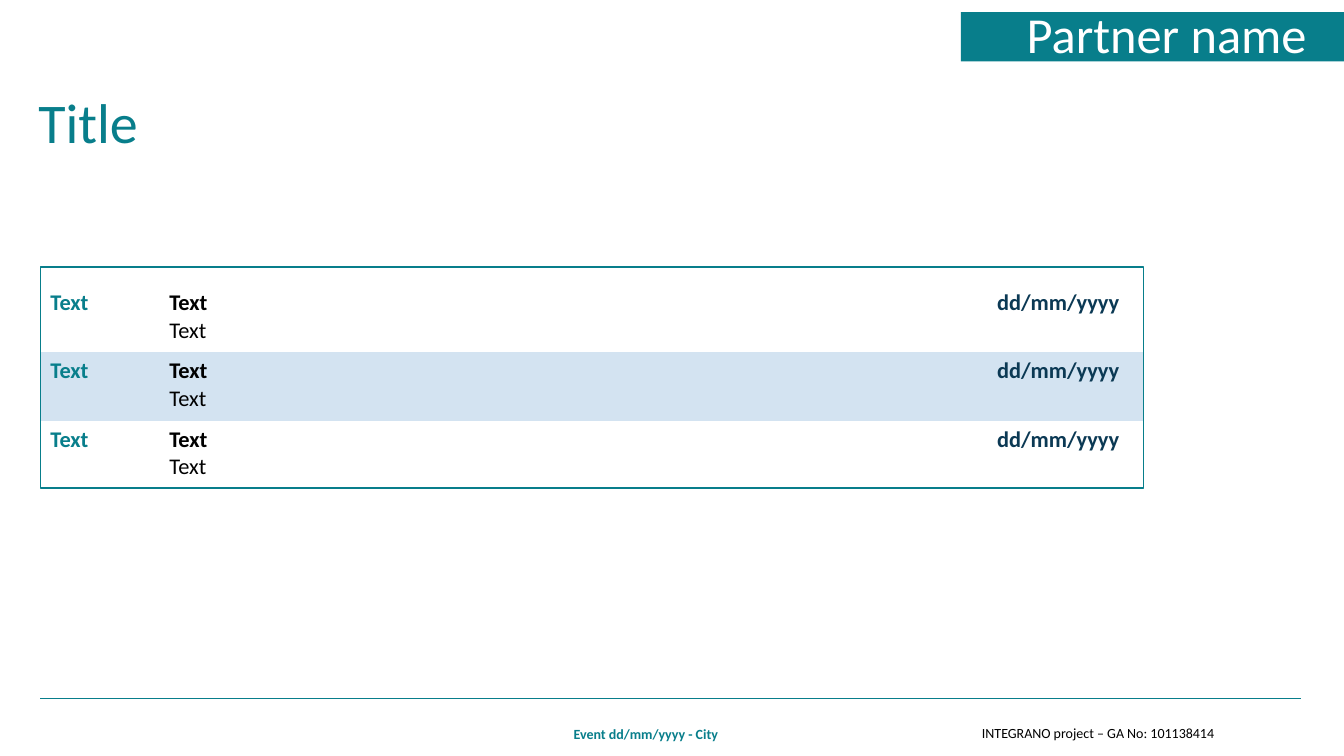
"""Builds a partner slide with a title, a dated text table and a footer."""
import dataclasses
import pptx
import pptx.dml.color
import pptx.enum.shapes
import pptx.enum.text
import pptx.oxml.ns
import pptx.util
from lxml import etree

Inches = pptx.util.Inches
Align = pptx.enum.text.PP_ALIGN
Anchor = pptx.enum.text.MSO_ANCHOR


@dataclasses.dataclass
class Theme:
    face: str = "Calibri"
    teal: str = "087E8B"
    navy: str = "0B3954"
    black: str = "000000"
    white: str = "FFFFFF"
    band: str = "D3E3F1"
    plain: str = "{2D5ABB26-0587-4C30-8999-92F81FD0307C}"
    title: int = 40
    name: int = 36
    body: int = 16
    foot: int = 10
    line: int = 1


class Deck:
    def __init__(self, theme):
        self.theme = theme
        self.show = pptx.Presentation()
        self.show.slide_width = Inches(13.33)
        self.show.slide_height = Inches(7.5)
        self.slide = self.show.slides.add_slide(self.show.slide_layouts[5])

    def color(self, code):
        return pptx.dml.color.RGBColor.from_string(code)

    def font(self, run, size, code, bold=False):
        run.font.name = self.theme.face
        run.font.size = pptx.util.Pt(size)
        run.font.color.rgb = self.color(code)
        run.font.bold = bold

    def stroke(self, shape):
        shape.line.color.rgb = self.color(self.theme.teal)
        shape.line.width = pptx.util.Pt(self.theme.line)

    def put_text(self, shape, text, size, code, align, anchor, bold=False):
        frame = shape.text_frame
        frame.text = text
        frame.word_wrap = True
        frame.auto_size = pptx.enum.text.MSO_AUTO_SIZE.NONE
        frame.vertical_anchor = anchor
        frame.paragraphs[0].alignment = align
        self.font(frame.paragraphs[0].runs[0], size, code, bold)

    def title(self, text, left, top, width, height):
        head = self.slide.shapes.title
        head.left, head.top = Inches(left), Inches(top)
        head.width, head.height = Inches(width), Inches(height)
        self.put_text(head, text, self.theme.title, self.theme.teal, Align.LEFT, Anchor.MIDDLE)

    def label(self, text, area, size, code, align, bold=False):
        box = self.slide.shapes.add_textbox(*map(Inches, area))
        self.put_text(box, text, size, code, align, Anchor.TOP, bold)

    def rect(self, area, fill=None):
        kind = pptx.enum.shapes.MSO_SHAPE.RECTANGLE
        shape = self.slide.shapes.add_shape(kind, *map(Inches, area))
        shape.shadow.inherit = False
        if fill:
            shape.fill.solid()
            shape.fill.fore_color.rgb = self.color(fill)
            shape.line.fill.background()
        else:
            shape.fill.background()
            self.stroke(shape)

    def rule(self, left, right, top):
        kind = pptx.enum.shapes.MSO_CONNECTOR.STRAIGHT
        line = self.slide.shapes.add_connector(
            kind, Inches(left), Inches(top), Inches(right), Inches(top))
        self.stroke(line)
        etree.SubElement(line._element.spPr, pptx.oxml.ns.qn("a:effectLst"))

    def table(self, rows, area, widths):
        theme = self.theme
        table = self.slide.shapes.add_table(
            len(rows), len(widths), *map(Inches, area)).table
        table.first_row = table.horz_banding = False
        style = table._tbl.tblPr.find(pptx.oxml.ns.qn("a:tableStyleId"))
        style.text = theme.plain
        for col, width in zip(table.columns, widths):
            col.width = Inches(width)
        for i, row in enumerate(rows):
            for j, text in enumerate(row):
                cell = table.cell(i, j)
                if i % 2:
                    cell.fill.solid()
                    cell.fill.fore_color.rgb = self.color(theme.band)
                else:
                    cell.fill.background()
                para = cell.text_frame.paragraphs[0]
                para.text = text
                code = (theme.teal, theme.black, theme.navy)[j]
                for k, run in enumerate(para.runs):
                    self.font(run, theme.body, code, k == 0)

    def save(self):
        self.show.save("out.pptx")


def main():
    theme = Theme()
    deck = Deck(theme)
    deck.label("INTEGRANO project – GA No: 101138414", (9.27, 7.14, 2.87, 0.27),
               theme.foot, theme.black, Align.RIGHT)
    deck.rule(0.4, 12.9, 6.93)
    deck.rect((9.53, 0.12, 3.8, 0.49), theme.teal)
    deck.label("Event dd/mm/yyyy - City", (4.97, 7.15, 2.87, 0.27),
               theme.foot, theme.teal, Align.CENTER, True)
    deck.title("Title", 0.28, 0.82, 10.3, 0.77)
    rows = [("Text", "Text\nText", "dd/mm/yyyy")] * 3
    deck.table(rows, (0.4, 2.82, 10.94, 2.03), (1.18, 8.21, 1.55))
    deck.rect((0.4, 2.65, 10.94, 2.19))
    deck.label("Partner name", (10.03, -0.02, 3.03, 1.31),
               theme.name, theme.white, Align.RIGHT)
    deck.save()


if __name__ == "__main__":
    main()
